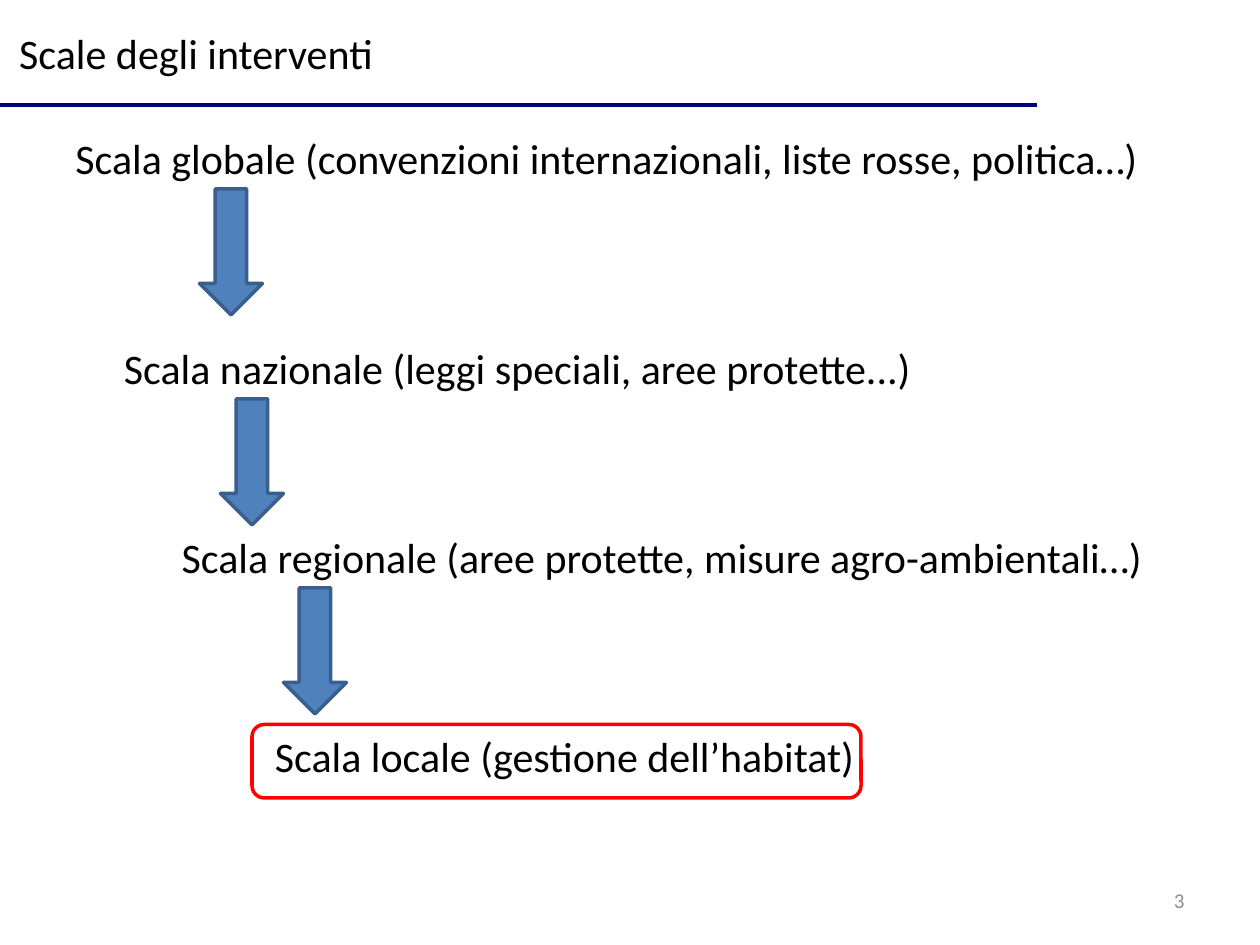
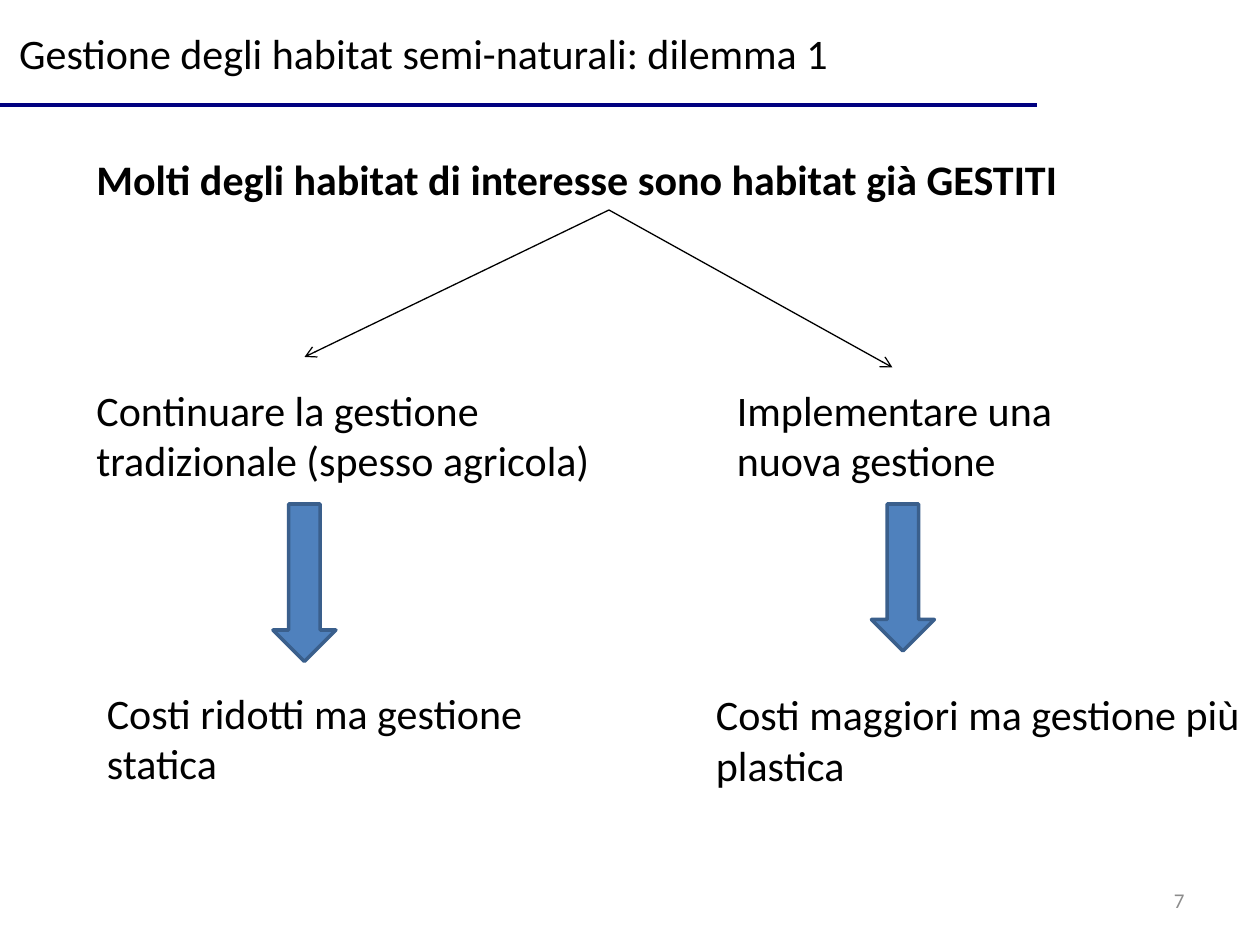
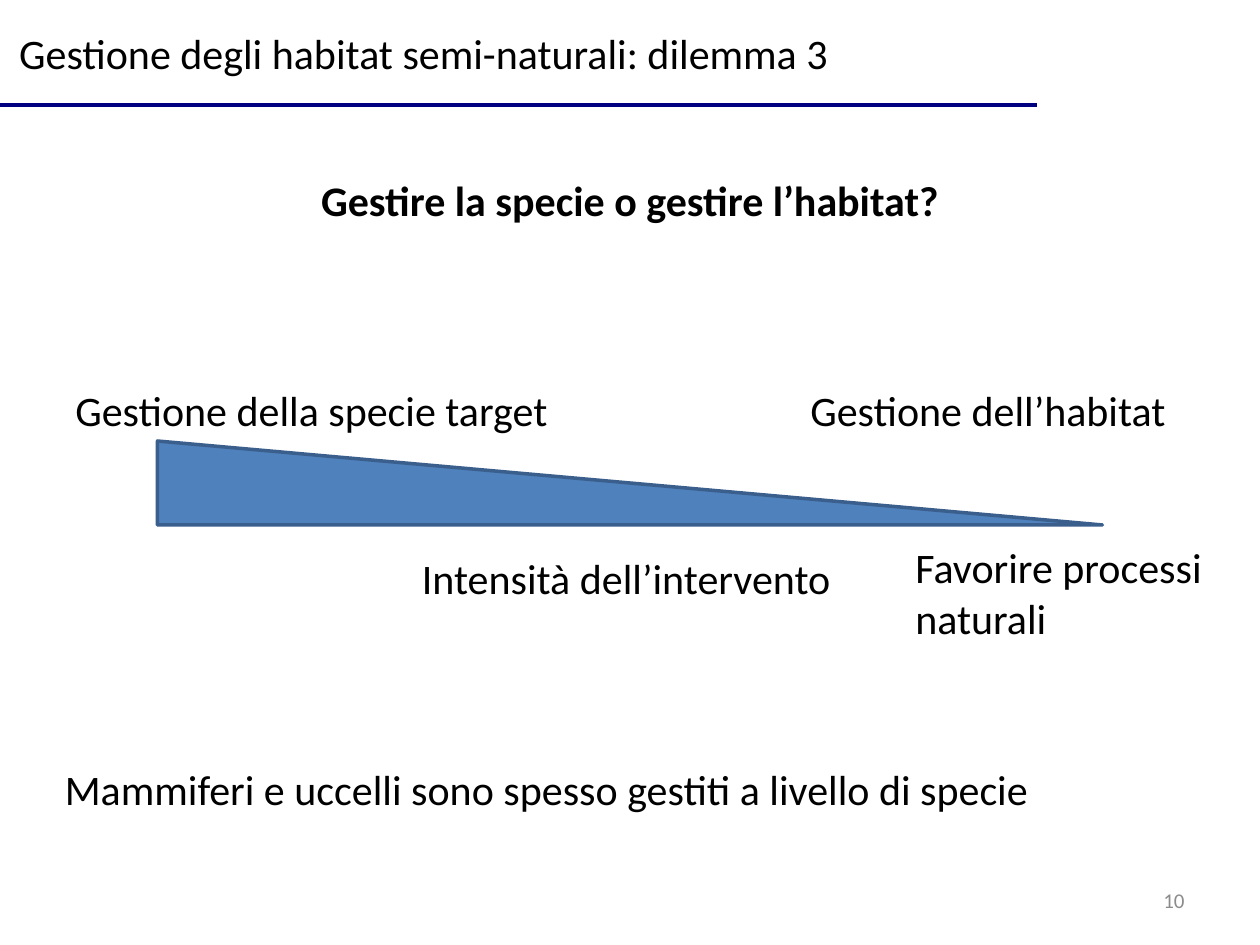
from dataclasses import dataclass

from lxml.etree import SubElement
from pptx import Presentation
from pptx.dml.color import RGBColor
from pptx.enum.shapes import MSO_CONNECTOR as CONN, MSO_SHAPE as SHAPE
from pptx.enum.text import MSO_ANCHOR as ANCHOR, MSO_AUTO_SIZE as FIT, PP_ALIGN as ALIGN
from pptx.oxml.ns import qn
from pptx.util import Emu, Pt


@dataclass(frozen=True)
class Theme:
    font: str = "Calibri"
    text: str = "000000"
    muted: str = "8C8C8C"
    rule: str = "000080"
    fill: str = "4F81BD"
    edge: str = "3A5F8C"
    accent: str = "FF0000"
    body_pt: float = 24
    number_pt: float = 12
    heavy_pt: float = 2
    thin_pt: float = 0.75


def px(n):
    return Emu(n * 9525)


def assign(target, values):
    for name, value in values.items():
        setattr(target, name, value)


class Deck:
    def __init__(self, theme):
        self.theme = theme
        self.prs = Presentation()
        assign(self.prs, {"slide_width": px(960), "slide_height": px(720)})
        self.slide = None

    def new_slide(self, title, title_width, number):
        self.slide = self.prs.slides.add_slide(self.prs.slide_layouts[5])
        self.line((0, 80), (790, 80), self.theme.rule, self.theme.heavy_pt)
        s = self.slide.shapes.title
        box = map(px, (5, 16, title_width, 48))
        assign(s, dict(zip(("left", "top", "width", "height"), box)))
        self.set_text(s, title, wrap=False)
        self.text(number, 688, 667, 224, 38, size=self.theme.number_pt, color=self.theme.muted,
                  align=ALIGN.RIGHT, anchor=ANCHOR.MIDDLE, fit=FIT.NONE)

    def set_text(self, s, text, size=None, color=None, bold=False, align=ALIGN.LEFT,
                 anchor=ANCHOR.TOP, wrap=True, fit=FIT.SHAPE_TO_FIT_TEXT):
        tf = s.text_frame
        assign(tf, {"word_wrap": wrap, "auto_size": fit, "vertical_anchor": anchor})
        p = tf.paragraphs[0]
        p.alignment = align
        r = p.add_run()
        r.text = text
        assign(r.font, {"name": self.theme.font, "size": Pt(size or self.theme.body_pt), "bold": bold})
        r.font.color.rgb = RGBColor.from_string(color or self.theme.text)

    def text(self, text, x, y, w, h=48, **style):
        s = self.slide.shapes.add_textbox(*map(px, (x, y, w, h)))
        self.set_text(s, text, **style)

    def stroke(self, s, color, width):
        s.line.color.rgb = RGBColor.from_string(color)
        s.line.width = Pt(width)

    def shape(self, kind, x, y, w, h, fill=None, edge=None):
        s = self.slide.shapes.add_shape(kind, *map(px, (x, y, w, h)))
        s.shadow.inherit = False
        if fill:
            s.fill.solid()
            s.fill.fore_color.rgb = RGBColor.from_string(fill)
        else:
            s.fill.background()
        self.stroke(s, edge or self.theme.edge, self.theme.heavy_pt)
        return s

    def down_arrow(self, x, y, h):
        self.shape(SHAPE.DOWN_ARROW, x, y, 48, h, self.theme.fill)

    def line(self, start, end, color, width, arrow=False):
        s = self.slide.shapes.add_connector(CONN.STRAIGHT, *map(px, start + end))
        self.stroke(s, color, width)
        props = s.element.spPr
        if arrow:
            SubElement(props.find(qn("a:ln")), qn("a:tailEnd"), type="arrow")
        SubElement(props, qn("a:effectLst"))


def scales(deck):
    deck.new_slide("Scale degli interventi", 292, "3")
    levels = [
        ("Scala globale (convenzioni internazionali, liste rosse, politica…)", 48, 96, 836, 152),
        ("Scala nazionale (leggi speciali, aree protette...)", 85, 256, 625, 168),
        ("Scala regionale (aree protette, misure agro-ambientali…)", 129, 400, 760, 216),
        ("Scala locale (gestione dell’habitat)", 200, 552, 465, None),
    ]
    for text, x, y, w, arrow_x in levels:
        deck.text(text, x, y, w, wrap=False)
        if arrow_x:
            deck.down_arrow(arrow_x, y + 48, 96)
    deck.shape(SHAPE.ROUNDED_RECTANGLE, 192, 552, 464, 56, edge=deck.theme.accent)


def management_choice(deck):
    deck.new_slide("Gestione degli habitat semi-naturali: dilemma 1", 641, "7")
    deck.text("Molti degli habitat di interesse sono habitat già GESTITI", 64, 112, 824, bold=True)
    options = [
        (("Continuare la gestione tradizionale (spesso agricola)", 64, 288, 416, 126),
         ("Costi ridotti ma gestione statica", 72, 519, 424, 87),
         (232, 272), (208, 384, 120)),
        (("Implementare una nuova gestione", 552, 288, 320, 126),
         ("Costi maggiori ma gestione più plastica", 536, 520, 424, 87),
         (680, 280), (664, 384, 112)),
    ]
    for choice, cost, branch_end, arrow in options:
        deck.text(*choice)
        deck.text(*cost)
        deck.line((464, 160), branch_end, deck.theme.text, deck.theme.thin_pt, arrow=True)
        deck.down_arrow(*arrow)


def species_or_habitat(deck):
    deck.new_slide("Gestione degli habitat semi-naturali: dilemma 3", 641, "10")
    deck.text("Gestire la specie o gestire l’habitat?", 48, 128, 864, 87, bold=True, align=ALIGN.CENTER)
    wedge = deck.shape(SHAPE.ISOSCELES_TRIANGLE, 120, 336, 720, 64, deck.theme.fill)
    wedge.adjustments[0] = 0
    labels = [
        ("Gestione della specie target", 48, 288, 392, 87),
        ("Gestione dell’habitat", 608, 288, 328, 87),
        ("Intensità dell’intervento", 312, 416, 544, 48),
        ("Favorire processi naturali", 688, 408, 272, 87),
        ("Mammiferi e uccelli sono spesso gestiti a livello di specie", 40, 577, 856, 87),
    ]
    for label in labels:
        deck.text(*label)


def main():
    deck = Deck(Theme())
    for build in (scales, management_choice, species_or_habitat):
        build(deck)
    deck.prs.save("out.pptx")


if __name__ == "__main__":
    main()
